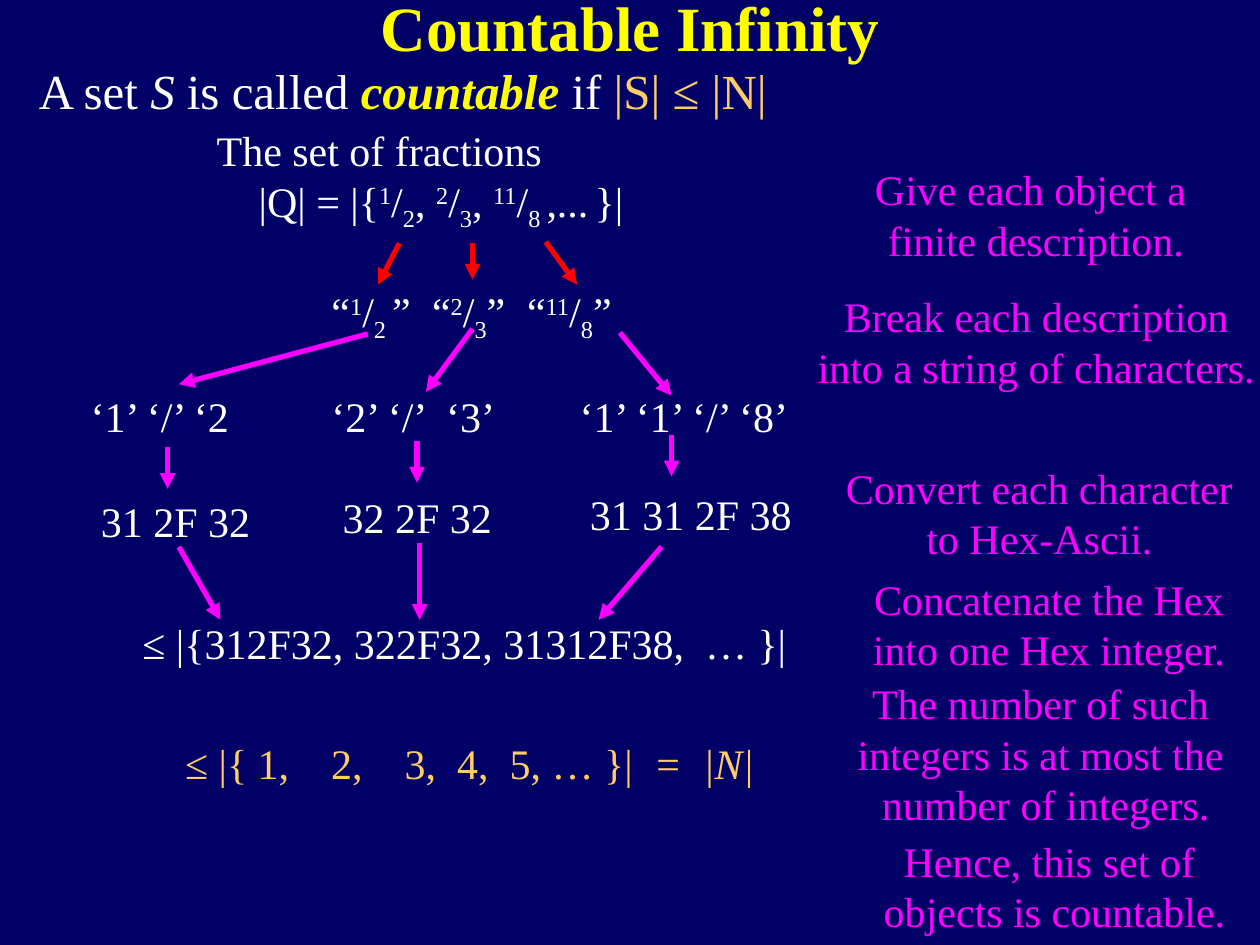
"""Build the Countable Infinity slide."""
from dataclasses import dataclass
from typing import Optional

from lxml.etree import SubElement
from pptx import Presentation
from pptx.dml.color import RGBColor as RGB
from pptx.enum.shapes import MSO_CONNECTOR as Conn
from pptx.enum.text import MSO_ANCHOR as Anchor, MSO_AUTO_SIZE as AutoSize, PP_ALIGN as Align
from pptx.oxml.ns import qn
from pptx.util import Pt


@dataclass(frozen=True)
class Theme:
    font: str = "Times New Roman"
    back: str = "000066"
    text: str = "FFFFFF"
    title: str = "FFFF00"
    accent: str = "FFCC66"
    note: str = "FF00FF"
    first: str = "FF0000"
    title_size: float = 36
    lead_size: float = 28
    body_size: float = 24
    line: float = 3


T = Theme()


@dataclass(frozen=True)
class Run:
    text: str
    color: str = T.text
    size: float = T.body_size
    base: int = 0
    bold: bool = False
    italic: bool = False


@dataclass(frozen=True)
class Para:
    runs: tuple[Run, ...]
    align: Align = Align.LEFT
    indent: float = 0
    tabs: tuple[float, ...] = ()


@dataclass(frozen=True)
class Box:
    left: float
    top: float
    width: float
    height: float
    paras: tuple[Para, ...]
    inset: float = 21.6
    wrap: bool = True
    grow: bool = True
    anchor: Optional[Anchor] = None


@dataclass(frozen=True)
class Arrow:
    x1: float
    y1: float
    x2: float
    y2: float
    color: str = T.note


def fraction(top: str, bottom: str) -> tuple[Run, ...]:
    """Return the runs of a superscript over subscript fraction."""
    return Run(top, base=30), Run("/"), Run(bottom, base=-25)


def body(left: float, top: float, width: float, text: str, *tabs: float) -> Box:
    """Return a one-line box of plain body text."""
    return Box(left, top, width, 36.7, (Para((Run(text),), tabs=tabs),))


def note(left: float, top: float, width: float, height: float, *texts: str) -> Box:
    """Return a centred note with one paragraph per text."""
    paras = tuple(Para((Run(t, T.note),), Align.CENTER) for t in texts)
    return Box(left, top, width, height, paras, wrap=False)


def add_para(p, para: Para) -> None:
    """Fill a paragraph run by run."""
    p.alignment = para.align
    pPr = p._p.get_or_add_pPr()
    if para.indent:
        pPr.set("marL", "0")
        pPr.set("indent", str(Pt(para.indent)))
    if para.tabs:
        stops = SubElement(pPr, qn("a:tabLst"))
        for pos in para.tabs:
            SubElement(stops, qn("a:tab"), pos=str(Pt(pos)), algn="l")
    for run in para.runs:
        for i, text in enumerate(run.text.split("\n")):
            if i:
                p.add_line_break()
            r = p.add_run()
            r.text = text
            r.font.name, r.font.size = T.font, Pt(run.size)
            r.font.bold, r.font.italic = run.bold, run.italic
            r.font.color.rgb = RGB.from_string(run.color)
            if run.base:
                r._r.get_or_add_rPr().set("baseline", str(run.base * 1000))


def add_box(s, box: Box) -> None:
    """Draw a text box."""
    sp = s.shapes.add_textbox(Pt(box.left), Pt(box.top), Pt(box.width), Pt(box.height))
    tf = sp.text_frame
    tf.word_wrap = box.wrap
    tf.auto_size = AutoSize.SHAPE_TO_FIT_TEXT if box.grow else AutoSize.NONE
    tf.margin_left = Pt(box.inset)
    tf.margin_right = Pt(0 if box.wrap and box.grow else box.inset)
    tf.margin_top = tf.margin_bottom = Pt(3.6)
    if box.anchor is not None:
        tf.vertical_anchor = box.anchor
    for i, para in enumerate(box.paras):
        add_para(tf.add_paragraph() if i else tf.paragraphs[0], para)


def add_arrow(s, arrow: Arrow) -> None:
    """Draw a straight arrow."""
    ends = (Pt(v) for v in (arrow.x1, arrow.y1, arrow.x2, arrow.y2))
    c = s.shapes.add_connector(Conn.STRAIGHT, *ends)
    c.line.color.rgb = RGB.from_string(arrow.color)
    c.line.width = Pt(T.line)
    SubElement(c.line._get_or_add_ln(), qn("a:tailEnd"), type="triangle")
    SubElement(c._element.spPr, qn("a:effectLst"))


LEAD = (
    Run("A set ", size=T.lead_size),
    Run("S", size=T.lead_size, italic=True),
    Run(" is called ", size=T.lead_size),
    Run("countable ", T.title, T.lead_size, bold=True, italic=True),
    Run("if ", size=T.lead_size),
    Run("|S| ≤ |N|", T.accent, T.lead_size),
)
SET_Q = (Run("|Q| = |{"), *fraction("1", "2"), Run(", "), *fraction("2", "3"),
         Run(", "), *fraction("11", "8 "), Run(",...\t}|"))
QUOTED = (Run("“"), *fraction("1", "2 "), Run("”\t“"), *fraction("2", "3"),
          Run("”\t“"), *fraction("11", "8"), Run("”"))
NATURALS = (Run("≤ |{ 1,\t2,\t3,\t4,\t5, … }|\t", T.accent),
            Run("=\t|N|", T.accent, italic=True))

BOXES = (
    Box(54, -30.2, 612, 90, (Para((Run("Countable Infinity", T.title, T.title_size, bold=True),),
                                  Align.CENTER),), 7.2, grow=False, anchor=Anchor.MIDDLE),
    Box(15.1, 31, 442.1, 41.2, (Para(LEAD),), 7.2),
    Box(102.2, 67.7, 294.5, 65.5, (Para((Run("The set of fractions"),)),
                                   Para(SET_Q, indent=24, tabs=(222.8,)))),
    Box(167.8, 159.8, 264.2, 36.7, (Para(QUOTED, tabs=(57.5, 111.8)),)),
    body(30.2, 219.6, 336.2, "‘1’ ‘/’ ‘2"),
    body(167.8, 219.6, 149.8, "‘2’ ‘/’\t‘3’", 65.5),
    body(309.6, 219.6, 213.1, "‘1’ ‘1’ ‘/’ ‘8’"),
    body(36, 279.4, 129.6, "31 2F 32"),
    body(174.2, 277.2, 129.6, "32 2F 32"),
    body(315.4, 275.8, 159.8, "31 31 2F 38"),
    body(59.8, 349.2, 427, "≤ |{312F32, 322F32, 31312F38,\t… }|", 321.5),
    Box(84.2, 417.6, 371.5, 36.7,
        (Para(NATURALS, tabs=(83.5, 125.5, 155.5, 185.5, 267.8, 296)),)),
    note(477.4, 90, 229, 65.5, "Give each object a \nfinite description."),
    note(444.2, 162.7, 295.9, 65.5, "Break each description\ninto a string of characters."),
    note(460.8, 260.6, 266.4, 65.5, "Convert each character\nto Hex-Ascii."),
    note(475.9, 324, 247, 72, "Concatenate the Hex", "into one Hex integer."),
    note(467.3, 383.8, 260.6, 94.3, "The number of such ", "integers is at most the ",
         "number of integers."),
    note(482.4, 473.8, 240.5, 65.5, "Hence, this set of \nobjects is countable."),
)

ARROWS = (
    Arrow(228.2, 139, 216, 162.7, T.first),
    Arrow(270, 139, 270, 159.8, T.first),
    Arrow(311.8, 138.2, 329.8, 162.7, T.first),
    Arrow(210.2, 190.8, 102.2, 219.6),
    Arrow(270, 187.9, 243.4, 223.9),
    Arrow(354.2, 190.1, 383.8, 226.1),
    Arrow(95.8, 255.6, 95.8, 279.4),
    Arrow(238.3, 252, 238.3, 275.8),
    Arrow(383.8, 248.4, 383.8, 272.2),
    Arrow(102.2, 312.5, 126, 354.2),
    Arrow(239.8, 310.3, 239.8, 354.2),
    Arrow(378, 312.5, 342, 354.2),
)


def main() -> None:
    """Build and save the slide."""
    prs = Presentation()
    prs.slide_width, prs.slide_height = Pt(720), Pt(540)
    s = prs.slides.add_slide(prs.slide_layouts[6])
    s.background.fill.solid()
    s.background.fill.fore_color.rgb = RGB.from_string(T.back)
    for box in BOXES:
        add_box(s, box)
    for arrow in ARROWS:
        add_arrow(s, arrow)
    prs.save("out.pptx")


if __name__ == "__main__":
    main()
